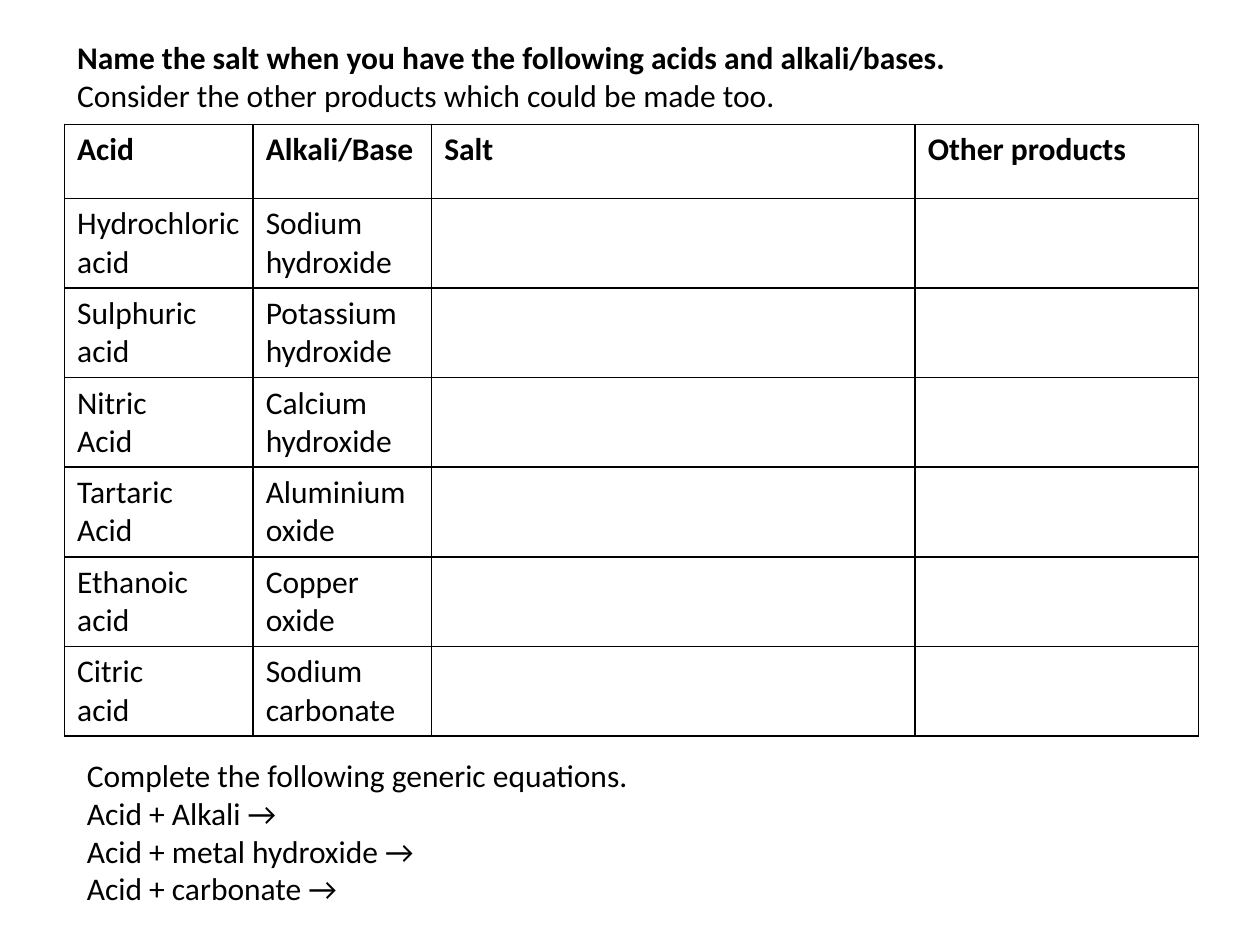
from lxml import etree
from pptx import Presentation
from pptx.dml.color import RGBColor
from pptx.enum import text
from pptx.oxml.ns import qn
from pptx.util import Pt

# Content
HEADING = ["Name the salt when you have the following acids and alkali/bases.",
           "Consider the other products which could be made too."]
HEADERS = ["Acid", "Alkali/Base", "Salt", "Other products"]
PAIRS = [
    ("Hydrochloric acid", "Sodium hydroxide"),
    ("Sulphuric acid", "Potassium hydroxide"),
    ("Nitric\nAcid", "Calcium hydroxide"),
    ("Tartaric\nAcid", "Aluminium oxide"),
    ("Ethanoic acid", "Copper oxide"),
    ("Citric\nacid", "Sodium carbonate"),
]
EQUATIONS = ["Complete the following generic equations.", "Acid + Alkali →",
             "Acid + metal hydroxide →", "Acid + carbonate →"]

# Format and layout, in points
COLORS = {"ink": "000000", "paper": "FFFFFF"}
FONT, SIZE = "Calibri", 18
LEFT, TABLE_TOP, ROW_H = 36.9, 71, 42.5
COL_WIDTHS = [107.8, 102, 276.3, 162]
HEADING_BOX = (LEFT, 18, 515, 51)
EQUATION_BOX = (42.4, 428.4, 327.6, 94.5)


def write(tf, lines, bold_lines=0):
    """Fill a text frame with one plain paragraph per line."""
    for i, line in enumerate(lines):
        p = tf.paragraphs[0] if i == 0 else tf.add_paragraph()
        p.alignment = text.PP_ALIGN.LEFT
        p.space_before = p.space_after = Pt(0)
        p.font.size = Pt(SIZE)
        if line:
            r = p.add_run()
            r.text = line
            r.font.name, r.font.size = FONT, Pt(SIZE)
            r.font.bold = i < bold_lines
            r.font.color.rgb = RGBColor.from_string(COLORS["ink"])


def fill_placeholder(sp, box, lines, **fmt):
    sp.left, sp.top, sp.width, sp.height = map(Pt, box)
    tf = sp.text_frame
    tf.word_wrap = True
    tf.auto_size = text.MSO_AUTO_SIZE.NONE
    tf.vertical_anchor = text.MSO_ANCHOR.TOP
    write(tf, lines, **fmt)


def add_borders(cell):
    tc_pr = cell._tc.get_or_add_tcPr()
    for i, side in enumerate(("lnL", "lnR", "lnT", "lnB")):
        ln = etree.Element(qn("a:" + side), w=str(Pt(1)))
        fill = etree.SubElement(ln, qn("a:solidFill"))
        etree.SubElement(fill, qn("a:srgbClr"), val=COLORS["ink"])
        tc_pr.insert(i, ln)


prs = Presentation()
prs.slide_width, prs.slide_height = Pt(720), Pt(540)
s = prs.slides.add_slide(prs.slide_layouts[1])

# Heading
fill_placeholder(s.shapes.title, HEADING_BOX, HEADING, bold_lines=1)

# Equations, without bullets
body = s.placeholders[1]
fill_placeholder(body, EQUATION_BOX, EQUATIONS)
for p in body.text_frame.paragraphs:
    p_pr = p._p.get_or_add_pPr()
    p_pr.set("marL", "0")
    p_pr.set("indent", "0")
    bullet = etree.Element(qn("a:buNone"))
    p_pr.find(qn("a:spcAft")).addnext(bullet)

# Table of acids and bases
rows = [HEADERS] + [[acid, base, "", ""] for acid, base in PAIRS]
table = s.shapes.add_table(len(rows), len(HEADERS), Pt(LEFT), Pt(TABLE_TOP),
                           Pt(sum(COL_WIDTHS)), Pt(ROW_H * len(rows))).table
table.first_row = table.horz_banding = False
for col, width in zip(table.columns, COL_WIDTHS):
    col.width = Pt(width)
for i, row in enumerate(rows):
    table.rows[i].height = Pt(ROW_H)
    for j, words in enumerate(row):
        cell = table.cell(i, j)
        cell.fill.solid()
        cell.fill.fore_color.rgb = RGBColor.from_string(COLORS["paper"])
        add_borders(cell)
        write(cell.text_frame, words.split("\n"), bold_lines=int(i == 0))

prs.save("out.pptx")
